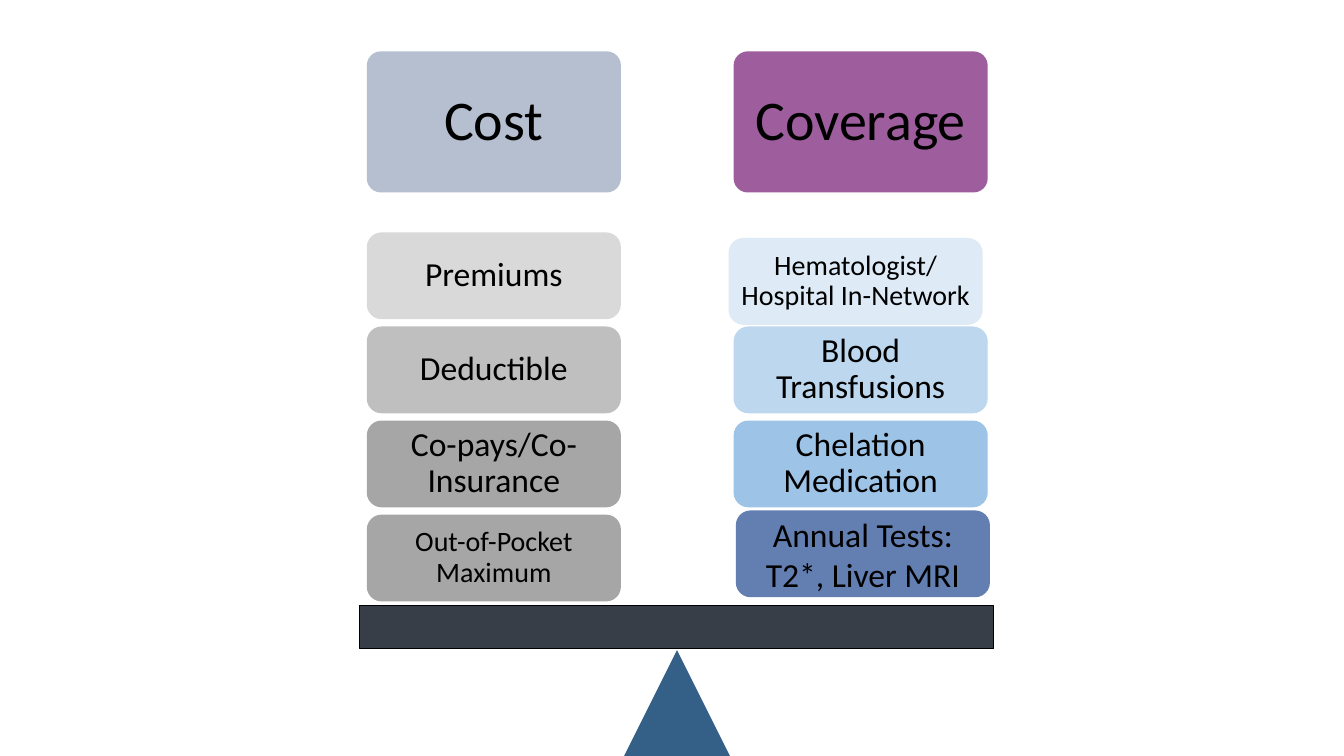
from lxml import etree
from pptx import Presentation
from pptx import util as u
from pptx.dml.color import RGBColor
from pptx.enum import shapes, text
from pptx.oxml.ns import qn

COLORS = {
    "text": "000000", "cost": "ADB9CA", "coverage": "660066",
    "beam": "222A35", "pivot": "1F4E79",
    "gray1": "D9D9D9", "gray2": "BFBFBF", "gray3": "A6A6A6",
    "blue1": "DEEBF7", "blue2": "BDD7EE", "blue3": "9DC3E6", "blue4": "2F5597",
}
INSETS = {40: 12, 24: 7.2, 20: 6}
CARD_WIDTH, CARD_HEIGHT, HEADER_HEIGHT = 181.5, 62, 100.8
COST_LEFT, COVERAGE_LEFT = 262, 524
HEADER_TOP, STACK_TOP, STACK_STEP = 36.7, 166, 67.2

COST_ITEMS = [
    (["Premiums"], 24, "gray1", 0, 0),
    (["Deductible"], 24, "gray2", 0, 0),
    (["Co-pays/Co-Insurance"], 24, "gray3", 0, 0),
    (["Out-of-Pocket Maximum"], 20, "gray3", 0, 0),
]
COVERAGE_ITEMS = [
    (["Hematologist/ Hospital In-Network"], 20, "blue1", -3.6, 4),
    (["Blood Transfusions"], 24, "blue2", 0, 0),
    (["Chelation Medication"], 24, "blue3", 0, 0),
    (["Annual Tests:", "T2*, Liver MRI"], 24, "blue4", 1.6, -3),
]


class BalanceSlide:
    """Draws the elements of the balance in one style on one slide."""

    def __init__(self, slide, font="Calibri"):
        self.slide = slide
        self.font = font

    def block(self, kind, left, top, width, height, color, opacity=100, outline=None):
        shape = self.slide.shapes.add_shape(
            kind, u.Pt(left), u.Pt(top), u.Pt(width), u.Pt(height))
        shape.shadow.inherit = False
        shape.fill.solid()
        shape.fill.fore_color.rgb = RGBColor.from_string(COLORS[color])
        if opacity < 100:
            fill_color = next(shape.fill._xPr.iter(qn("a:srgbClr")))
            etree.SubElement(fill_color, qn("a:alpha"), val=str(opacity * 1000))
        if outline:
            shape.line.color.rgb = RGBColor.from_string(COLORS[outline])
            shape.line.width = u.Pt(0.75)
        else:
            shape.line.fill.background()
        return shape

    def card(self, lines, size, left, top, height, color, opacity=100, corner=0.17):
        shape = self.block(shapes.MSO_SHAPE.ROUNDED_RECTANGLE,
                           left, top, CARD_WIDTH, height, color, opacity)
        shape.adjustments[0] = corner
        frame = shape.text_frame
        frame.word_wrap = True
        frame.vertical_anchor = text.MSO_ANCHOR.MIDDLE
        frame.margin_left = frame.margin_right = u.Pt(INSETS[size])
        frame.margin_top = frame.margin_bottom = u.Pt(INSETS[size])
        for index, line in enumerate(lines):
            paragraph = frame.add_paragraph() if index else frame.paragraphs[0]
            paragraph.alignment = text.PP_ALIGN.CENTER
            paragraph.line_spacing = 0.9 if len(lines) == 1 else 1.0
            run = paragraph.add_run()
            run.text = line
            run.font.name = self.font
            run.font.size = u.Pt(size)
            run.font.color.rgb = RGBColor.from_string(COLORS["text"])

    def header(self, title, left, color, opacity):
        self.card([title], 40, left, HEADER_TOP, HEADER_HEIGHT, color, opacity, 0.1)

    def stack(self, items, left):
        for row, (lines, size, color, shift_x, shift_y) in reversed(list(enumerate(items))):
            top = STACK_TOP + row * STACK_STEP + shift_y
            opacity = 75 if color == "blue4" else 100
            self.card(lines, size, left + shift_x, top, CARD_HEIGHT, color, opacity)


def main():
    presentation = Presentation()
    presentation.slide_width = u.Pt(960)
    presentation.slide_height = u.Pt(540)
    balance = BalanceSlide(presentation.slides.add_slide(presentation.slide_layouts[6]))
    balance.header("Cost", COST_LEFT, "cost", 90)
    balance.header("Coverage", COVERAGE_LEFT, "coverage", 63)
    balance.block(shapes.MSO_SHAPE.ISOSCELES_TRIANGLE, 445.8, 464.4, 75.6, 75.6, "pivot", 90)
    balance.block(shapes.MSO_SHAPE.RECTANGLE, 257, 432.5, 453, 31, "beam", 90, "text")
    balance.stack(COVERAGE_ITEMS, COVERAGE_LEFT)
    balance.stack(COST_ITEMS, COST_LEFT)
    presentation.save("out.pptx")


if __name__ == "__main__":
    main()
